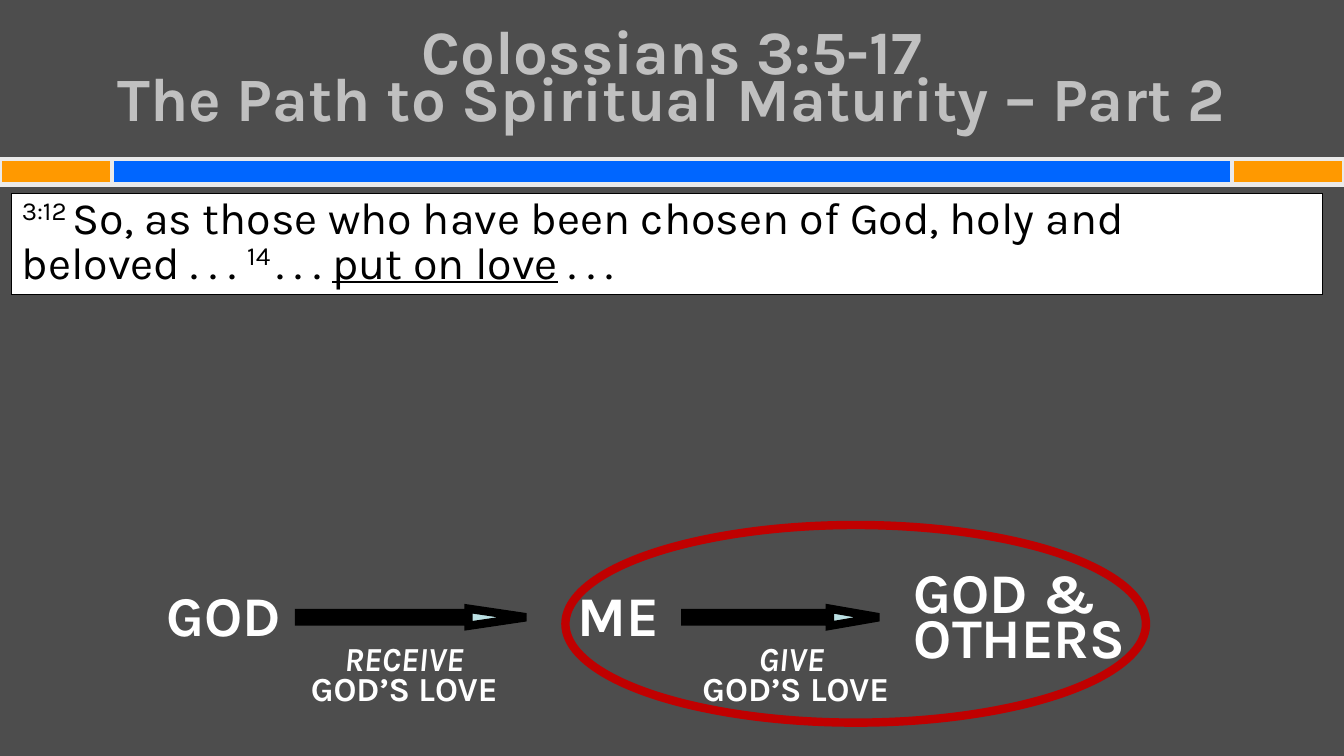
from pptx import Presentation
from pptx import util as u
from pptx.dml.color import RGBColor
from pptx.enum import shapes, text
from pptx.oxml.ns import qn
from lxml import etree

GREY = RGBColor(0x4D, 0x4D, 0x4D)
SILVER = RGBColor(0xC0, 0xC0, 0xC0)
PALE = RGBColor(0xEA, 0xEA, 0xEA)
BLUE = RGBColor(0x00, 0x66, 0xFF)
ORANGE = RGBColor(0xFF, 0x99, 0x00)
ICE = RGBColor(0xBB, 0xE0, 0xE3)
RED = RGBColor(0xC0, 0x00, 0x00)
WHITE = RGBColor(0xFF, 0xFF, 0xFF)
BLACK = RGBColor(0x00, 0x00, 0x00)

FONT = "Karla"
SLIDE_W, SLIDE_H = 33.87, 19.05
LEFT, CENTER = text.PP_ALIGN.LEFT, text.PP_ALIGN.CENTER
RECT = shapes.MSO_SHAPE.RECTANGLE

# Content: runs are (text, style); "\n" in a run is a line break
TITLE = [("Colossians 3:5-17\nThe Path to Spiritual Maturity – Part 2", "b")]
VERSE = [
    ("3:12 ", "sup"),
    ("So, as those who have been chosen of God, holy and beloved . . . ", ""),
    ("14 ", "sup"),
    (". . . ", ""),
    ("put on love", "u"),
    (" . . .", ""),
]
# Flow words: runs, left, width, height, alignment, line spacing
WORDS = [
    ([("GOD", "b")], 3.94, 4.24, 1.96, LEFT, None),
    ([("ME", "b")], 13.46, 4.24, 1.96, CENTER, None),
    ([("GOD & OTHERS", "b")], 22.78, 6.55, 2.59, LEFT, u.Pt(32)),
]
# Flow arrows: left, width, head length relative to height
ARROWS = [(7.54, 5.72, 3.375), (17.27, 4.88, 2.875)]
# Captions under the arrows: runs, left
CAPTIONS = [
    ([("RECEIVE", "bi"), (" GOD’S LOVE", "b")], 7.11),
    ([("GIVE\n", "bi"), (" GOD’S LOVE", "b")], 16.87),
]

prs = Presentation()
prs.slide_width, prs.slide_height = u.Cm(SLIDE_W), u.Cm(SLIDE_H)
s = prs.slides.add_slide(prs.slide_layouts[6])
s.background.fill.solid()
s.background.fill.fore_color.rgb = GREY


def add_shape(kind, left, top, width, height, fill, line, weight):
    sp = s.shapes.add_shape(kind, u.Cm(left), u.Cm(top), u.Cm(width), u.Cm(height))
    sp.shadow.inherit = False
    if fill is None:
        sp.fill.background()
    else:
        sp.fill.solid()
        sp.fill.fore_color.rgb = fill
    sp.line.color.rgb = line
    sp.line.width = u.Pt(weight)
    # Sharp corners
    miter = etree.SubElement(sp.line._get_or_add_ln(), qn("a:miter"))
    miter.set("lim", "800000")
    return sp


def write(sp, runs, size, color, align, spacing=None, anchor=text.MSO_ANCHOR.TOP):
    tf = sp.text_frame
    tf.word_wrap = True
    tf.vertical_anchor = anchor
    p = tf.paragraphs[0]
    p.alignment = align
    if spacing:
        p.line_spacing = spacing
    for words, style in runs:
        for i, part in enumerate(words.split("\n")):
            if i:
                p.add_line_break()
            if not part:
                continue
            r = p.add_run()
            r.text = part
            r.font.name, r.font.size = FONT, u.Pt(size)
            r.font.color.rgb = color
            r.font.bold = "b" in style
            r.font.italic = "i" in style
            r.font.underline = style == "u"
            if style == "sup":
                r.font._element.set("baseline", "30000")


def add_text(left, top, width, height, *args, **kwargs):
    sp = s.shapes.add_textbox(u.Cm(left), u.Cm(top), u.Cm(width), u.Cm(height))
    write(sp, *args, **kwargs)


# Divider bar with coloured ends
END_W = 2.82
for left, width, fill in [(0, SLIDE_W, BLUE), (0, END_W, ORANGE),
                          (SLIDE_W - END_W, END_W, ORANGE)]:
    add_shape(RECT, left, 4.01, width, 0.64, fill, PALE, 3)

# Title
add_text(1.7, 0.76, 30.48, 2.84, TITLE, 44, SILVER, CENTER, u.Pt(34),
         anchor=text.MSO_ANCHOR.MIDDLE)

# Flow from God through me to others
for runs, left, width, height, align, spacing in WORDS:
    add_text(left, 14.5, width, height, runs, 40, WHITE, align, spacing)
for left, width, head in ARROWS:
    arrow = add_shape(shapes.MSO_SHAPE.RIGHT_ARROW, left, 15.34, width, 0.43,
                      ICE, BLACK, 6)
    arrow.adjustments[1] = head
for runs, left in CAPTIONS:
    add_text(left, 16.18, 6.15, 1.8, runs, 24, WHITE, CENTER, 0.75)

# Verse
verse = add_shape(RECT, 0.3, 4.88, 33.02, 2.54, WHITE, BLACK, 0.75)
write(verse, VERSE, 32, BLACK, LEFT, u.Pt(32))

# Ring around the second step
add_shape(shapes.MSO_SHAPE.OVAL, 14.25, 13.23, 14.63, 4.98, None, RED, 6)

prs.save("out.pptx")
